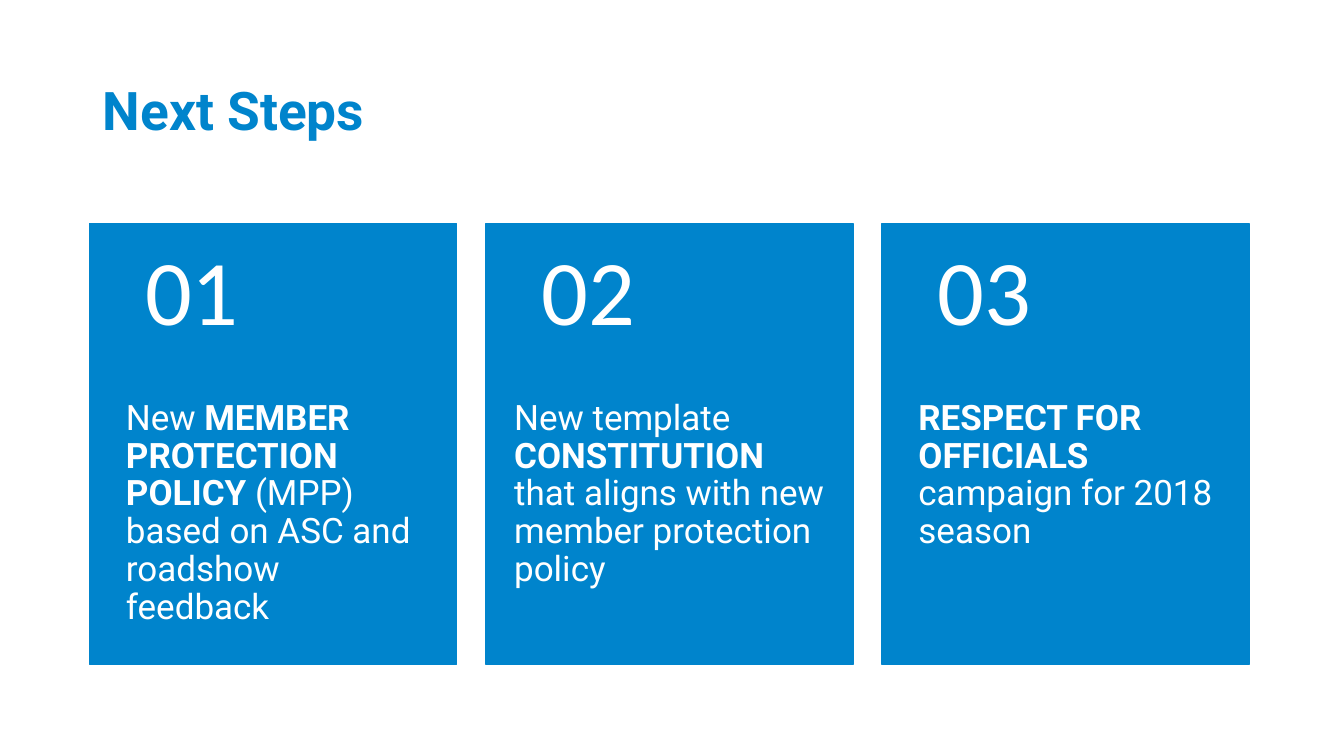
from pptx import Presentation
from pptx.dml.color import RGBColor
from pptx.enum.shapes import MSO_SHAPE
from pptx.enum.text import MSO_ANCHOR, MSO_AUTO_SIZE, PP_ALIGN
from pptx.util import Inches, Pt

BLUE, WHITE = "0084CC", "FFFFFF"
TITLE = "Next Steps"

# Each card: text box shift and width, then runs of (text, bold)
CARDS = [
    (0, 3.64, [("New ", False), ("MEMBER PROTECTION POLICY ", True),
               ("(MPP) based on ASC and roadshow feedback", False)]),
    (-0.08, 3.85, [("New template ", False), ("CONSTITUTION ", True),
                   ("that aligns with new member protection policy", False)]),
    (0, 3.64, [("RESPECT FOR OFFICIALS ", True),
               ("campaign for 2018 season", False)]),
]
CARD_LEFT, CARD_TOP, CARD_WIDTH, CARD_HEIGHT = 0.89, 2.22, 3.64, 4.37
CARD_PITCH = 3.93
NUMBER_SHIFT, NUMBER_TOP, NUMBER_HEIGHT = 0.19, 2.06, 1.75
BODY_TOP, BODY_HEIGHT = 3.97, 2.62
SIDE_INSET = 0.36


def color(hex_string):
    return RGBColor.from_string(hex_string)


def write_runs(paragraph, runs, size, font_name, hex_string):
    paragraph.alignment = PP_ALIGN.LEFT
    paragraph.line_spacing = 0.9
    for text, bold in runs:
        run = paragraph.add_run()
        run.text = text
        run.font.size = Pt(size)
        run.font.name = font_name
        run.font.bold = bold
        run.font.color.rgb = color(hex_string)


def add_text(shapes, box, insets, anchor, runs, size, font_name):
    text_frame = shapes.add_textbox(*map(Inches, box)).text_frame
    text_frame.word_wrap = True
    text_frame.vertical_anchor = anchor
    text_frame.margin_left = text_frame.margin_right = Inches(SIDE_INSET)
    text_frame.margin_top, text_frame.margin_bottom = map(Inches, insets)
    write_runs(text_frame.paragraphs[0], runs, size, font_name, WHITE)


def add_card(slide, index, body_shift, body_width, runs):
    left = CARD_LEFT + index * CARD_PITCH
    shapes = slide.shapes.add_group_shape().shapes

    # Blue panel
    panel = shapes.add_shape(MSO_SHAPE.RECTANGLE, *map(
        Inches, (left, CARD_TOP, CARD_WIDTH, CARD_HEIGHT)))
    panel.shadow.inherit = False
    panel.fill.solid()
    panel.fill.fore_color.rgb = color(BLUE)
    panel.line.color.rgb = color(BLUE)
    panel.line.width = Pt(1)

    # Step description and number
    add_text(shapes, (left + body_shift, BODY_TOP, body_width, BODY_HEIGHT),
             (0, 0.36), MSO_ANCHOR.TOP, runs, 25, "Roboto")
    add_text(shapes, (left + NUMBER_SHIFT, NUMBER_TOP, CARD_WIDTH, NUMBER_HEIGHT),
             (0.18, 0.18), MSO_ANCHOR.MIDDLE, [(f"{index + 1:02}", False)], 66, "Calibri")


def main():
    presentation = Presentation()
    presentation.slide_width = Inches(13.33)
    presentation.slide_height = Inches(7.5)
    slide = presentation.slides.add_slide(presentation.slide_layouts[5])

    # Title
    title = slide.shapes.title
    title.left, title.top, title.width, title.height = map(
        Inches, (0.92, 0.4, 11.5, 1.45))
    title.text_frame.auto_size = MSO_AUTO_SIZE.NONE
    title.text_frame.vertical_anchor = MSO_ANCHOR.MIDDLE
    write_runs(title.text_frame.paragraphs[0], [(TITLE, True)], 38, "Roboto", BLUE)

    # Numbered cards
    for index, card in enumerate(CARDS):
        add_card(slide, index, *card)

    presentation.save("out.pptx")


if __name__ == "__main__":
    main()
